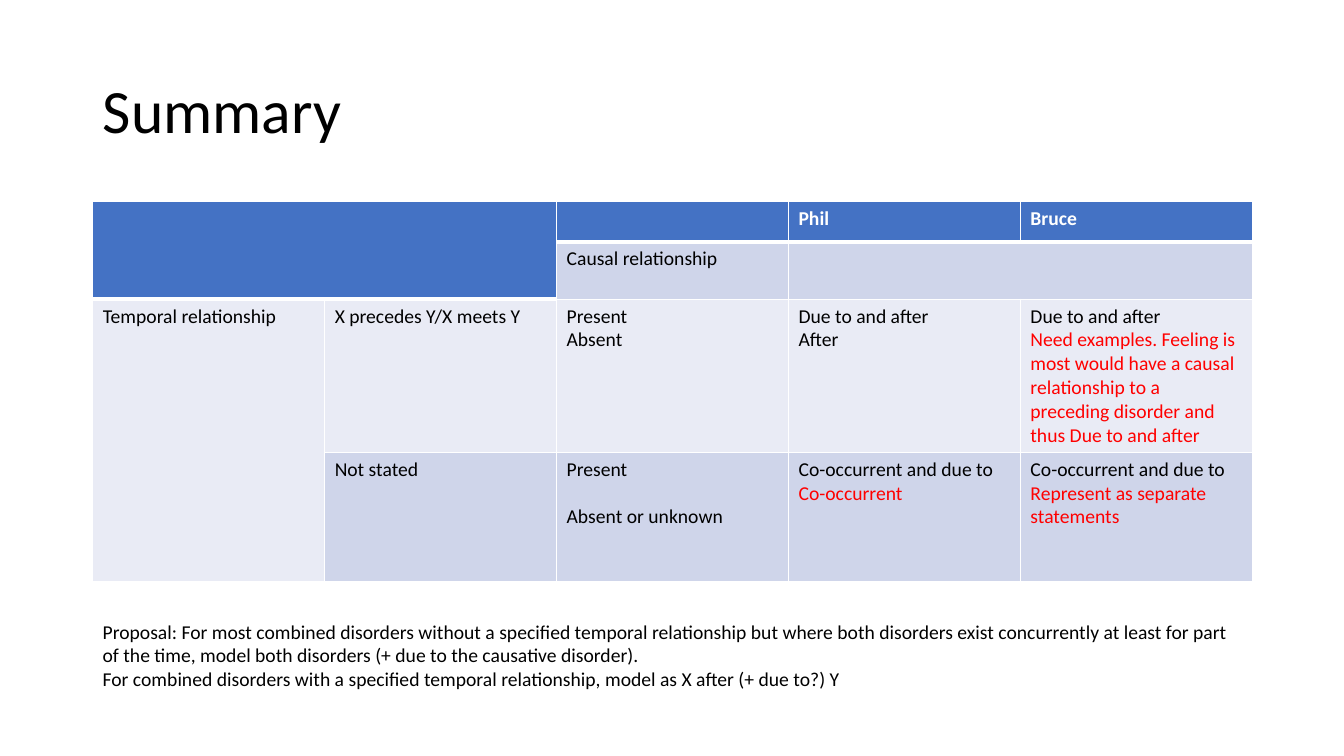
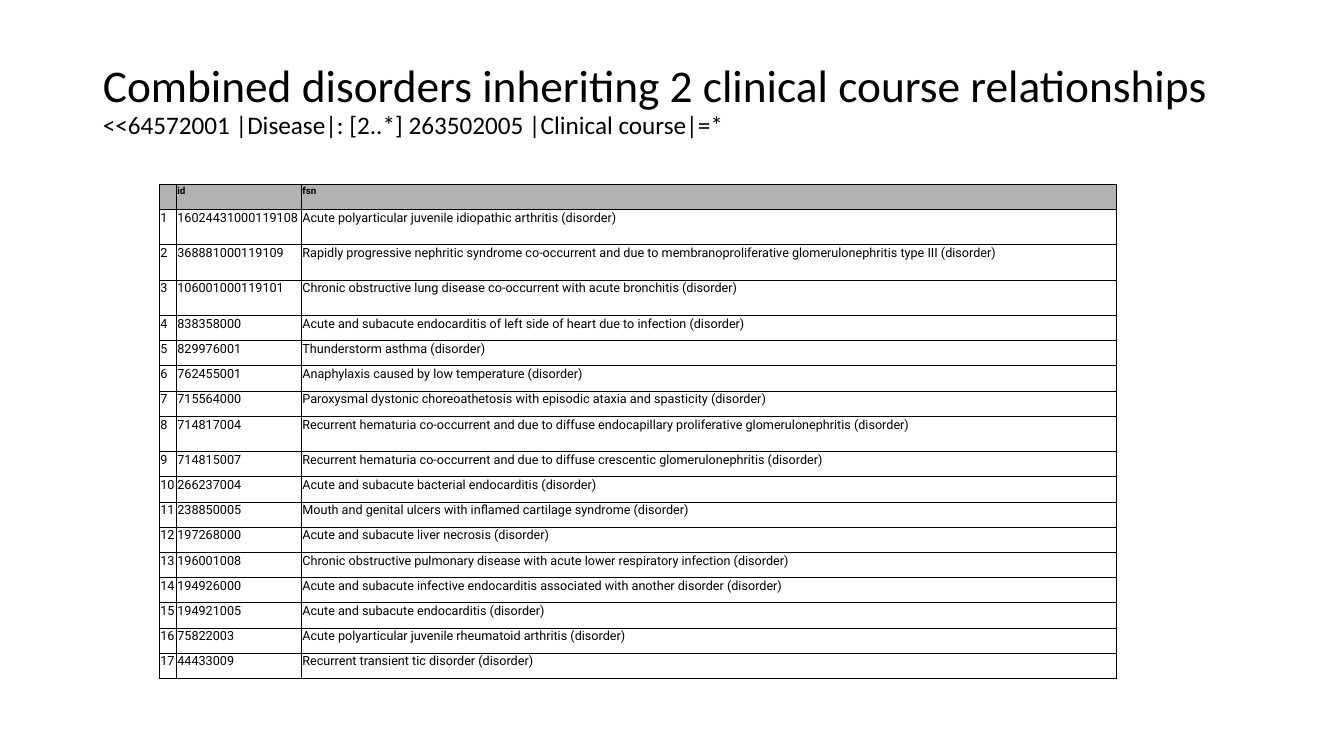
"""Build two slides on combined disorders: a summary grid and a list of concepts."""
from lxml.etree import SubElement
from pptx import Presentation
from pptx.dml.color import RGBColor
from pptx.enum.text import MSO_ANCHOR, MSO_AUTO_SIZE, PP_ALIGN
from pptx.oxml.ns import qn
from pptx.util import Emu, Pt

BLACK, WHITE, RED = "000000", "FFFFFF", "FF0000"
BLUE, GREY = "4472C4", "B0B3B2"
BANDS = ("E9EBF5", "CFD5EA")
BODY_FONT, LIST_FONT = "Calibri", "Roboto"
LEFT, WIDTH = 92, 1150

SUMMARY = [
    ["", "", "", "Phil", "Bruce"],
    ["", "", "Causal relationship", "", ""],
    ["Temporal relationship", "X precedes Y/X meets Y", "Present\nAbsent",
     "Due to and after\nAfter",
     "Due to and after\nNeed examples. Feeling is most would have a causal relationship "
     "to a preceding disorder and thus Due to and after"],
    ["", "Not stated", "Present\nAbsent or unknown",
     "Co-occurrent and due to\nCo-occurrent",
     "Co-occurrent and due to\nRepresent as separate statements"],
]
SUMMARY_HEADER = {(0, column) for column in range(5)} | {(1, 0), (1, 1)}
SUMMARY_SPANS = [((0, 0), (1, 1)), ((1, 3), (1, 4)), ((2, 0), (3, 0))]
RED_REMARKS = [(2, 4), (3, 3), (3, 4)]

PROPOSAL = (
    "Proposal: For most combined disorders without a specified temporal relationship but "
    "where both disorders exist concurrently at least for part of the time, model both "
    "disorders (+ due to the causative disorder).\n"
    "For combined disorders with a specified temporal relationship, "
    "model as X after (+ due to?) Y"
)

CONCEPTS = [
    ("16024431000119108", "Acute polyarticular juvenile idiopathic arthritis"),
    ("368881000119109", "Rapidly progressive nephritic syndrome co-occurrent and due to "
                        "membranoproliferative glomerulonephritis type III"),
    ("106001000119101", "Chronic obstructive lung disease co-occurrent with acute bronchitis"),
    ("838358000", "Acute and subacute endocarditis of left side of heart due to infection"),
    ("829976001", "Thunderstorm asthma"),
    ("762455001", "Anaphylaxis caused by low temperature"),
    ("715564000", "Paroxysmal dystonic choreoathetosis with episodic ataxia and spasticity"),
    ("714817004", "Recurrent hematuria co-occurrent and due to diffuse endocapillary "
                  "proliferative glomerulonephritis"),
    ("714815007", "Recurrent hematuria co-occurrent and due to diffuse crescentic "
                  "glomerulonephritis"),
    ("266237004", "Acute and subacute bacterial endocarditis"),
    ("238850005", "Mouth and genital ulcers with inflamed cartilage syndrome"),
    ("197268000", "Acute and subacute liver necrosis"),
    ("196001008", "Chronic obstructive pulmonary disease with acute lower respiratory infection"),
    ("194926000", "Acute and subacute infective endocarditis associated with another disorder"),
    ("194921005", "Acute and subacute endocarditis"),
    ("75822003", "Acute polyarticular juvenile rheumatoid arthritis"),
    ("44433009", "Recurrent transient tic disorder"),
]
TALL_ROWS = {1, 2, 3, 8}


def px(length):
    """Turn px, at 100 to the inch, into EMU."""
    return Emu(length * 9144)


def rgb(value):
    """Turn a hex string into a colour."""
    return RGBColor.from_string(value)


def write(frame, text, size, color=BLACK, bold=False, font=BODY_FONT):
    """Put text into a frame, one paragraph a line, in one style."""
    frame.text = text
    for para in frame.paragraphs:
        for span in para.runs:
            span.font.name = font
            span.font.size = Pt(size)
            span.font.bold = bold
            span.font.color.rgb = rgb(color)
        if not para.runs:
            SubElement(para._p, qn("a:endParaRPr"), sz=str(size * 100))


def add_page(deck, title, height, sizes):
    """Add a title-only slide whose title lines have the given sizes."""
    page = deck.slides.add_slide(deck.slide_layouts[5])
    box = page.shapes.title
    box.left, box.top, box.width, box.height = map(px, (LEFT, 40, WIDTH, height))
    frame = box.text_frame
    write(frame, title, sizes[0])
    frame.word_wrap = True
    frame.auto_size = MSO_AUTO_SIZE.NONE
    frame.vertical_anchor = MSO_ANCHOR.MIDDLE
    for para, size in zip(frame.paragraphs, sizes):
        para.alignment = PP_ALIGN.LEFT
        para.line_spacing = 0.9
        para.runs[0].font.size = Pt(size)
    return page


def add_grid(page, left, top, columns, rows):
    """Add a plain table with the given column widths and row heights."""
    frame = page.shapes.add_table(len(rows), len(columns), px(left), px(top),
                                  px(sum(columns)), px(sum(rows)))
    table = frame.table
    table.horz_banding = False
    for column, width in zip(table.columns, columns):
        column.width = px(width)
    for row, height in zip(table.rows, rows):
        row.height = px(height)
    return table


def set_borders(cell, color, **widths):
    """Draw the sides L, R, T and B of a cell in the given point widths."""
    properties = cell._tc.get_or_add_tcPr()
    for side, width in widths.items():
        line = SubElement(properties, qn(f"a:ln{side}"), w=str(Pt(width)))
        fill = SubElement(line, qn("a:solidFill"))
        SubElement(fill, qn("a:srgbClr"), val=color)


def paint(cell, color):
    """Fill a cell, or clear it when there is no colour."""
    if color:
        cell.fill.solid()
        cell.fill.fore_color.rgb = rgb(color)
    else:
        cell.fill.background()


def add_summary_table(page):
    """Add the grid of temporal against causal relationships."""
    table = add_grid(page, LEFT, 200, [230] * 5, [40, 57, 152, 128])
    for row, texts in enumerate(SUMMARY):
        for column, text in enumerate(texts):
            cell = table.cell(row, column)
            header = (row, column) in SUMMARY_HEADER
            below_header = (row - 1, column) in SUMMARY_HEADER
            write(cell.text_frame, text, 14, WHITE if header else BLACK, header)
            set_borders(cell, WHITE, L=1, R=1, T=3 if below_header else 1, B=3 if header else 1)
            paint(cell, BLUE if header else BANDS[row % 2])
    for first, last in SUMMARY_SPANS:
        table.cell(*first).merge(table.cell(*last))
    for place in RED_REMARKS:
        remark = table.cell(*place).text_frame.paragraphs[1]
        remark.runs[0].font.color.rgb = rgb(RED)
    table.cell(3, 2).text_frame.paragraphs[1].space_before = Pt(17)


def add_concept_table(page):
    """Add the numbered list of concepts."""
    records = [("", "id", "fsn")]
    records += [(str(number), code, f"{name} (disorder)")
                for number, (code, name) in enumerate(CONCEPTS, 1)]
    heights = [35 if row in TALL_ROWS else 25 for row in range(len(records))]
    table = add_grid(page, 158, 183, [17, 124, 808], heights)
    for row, record in enumerate(records):
        header = row == 0
        for column, text in enumerate(record):
            cell = table.cell(row, column)
            cell.margin_left = cell.margin_right = px(1)
            cell.margin_top = cell.margin_bottom = px(1)
            write(cell.text_frame, text, 7 if header else 9, bold=header, font=LIST_FONT)
            set_borders(cell, BLACK, L=0.75, R=0.75, T=0.75, B=0.75)
            paint(cell, GREY if header else None)


def add_note(page, text, top, height):
    """Add a wrapped note across the width of the slide."""
    box = page.shapes.add_textbox(px(LEFT), px(top), px(WIDTH), px(height))
    box.text_frame.word_wrap = True
    write(box.text_frame, text, 14)


def main():
    """Build and save the deck."""
    deck = Presentation()
    deck.slide_width, deck.slide_height = px(1333), px(750)

    summary = add_page(deck, "Summary", 145, [44])
    add_summary_table(summary)
    add_note(summary, PROPOSAL, 610, 81)

    concepts = add_page(
        deck,
        "Combined disorders inheriting 2 clinical course relationships\n"
        "<<64572001 |Disease|: [2..*] 263502005 |Clinical course|=*",
        122, [32.4, 18])
    add_concept_table(concepts)

    deck.save("out.pptx")


if __name__ == "__main__":
    main()
